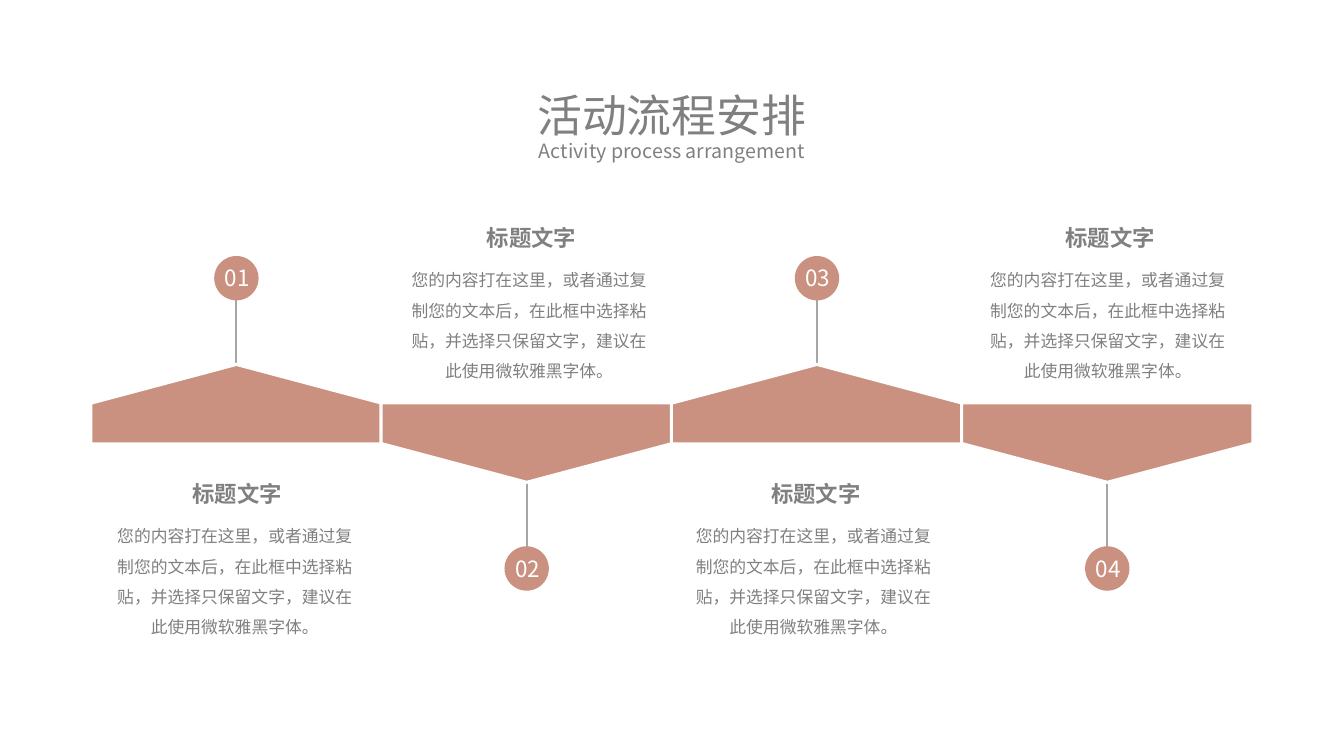
from dataclasses import dataclass

from lxml import etree
from pptx import Presentation
from pptx import util as u
from pptx.dml import color
from pptx.enum import shapes, text
from pptx.oxml import ns

# Grid: square cells, ten to the inch
CELL = u.Inches(0.1)
COLS, ROWS = 133.33, 75
MID = 42  # row of the band's axis

FONT = "Noto Sans CJK SC"
HUES = {"clay": "CA9180", "gray": "808080", "line": "A6A6A6", "white": "FFFFFF"}
HEAD = "标题文字"
BODY = ("您的内容打在这里，或者通过复制您的文本后，在此框中选择粘贴，"
        "并选择只保留文字，建议在此使用微软雅黑字体。")


@dataclass(frozen=True)
class Step:
    num: str
    col: float   # centre of plate, stem and bead
    note: float  # centre of the body text
    side: int    # -1 points up, 1 points down

    def row(self, off: float) -> float:
        return MID + self.side * off


@dataclass(frozen=True)
class Style:
    size: float
    hue: str = "gray"
    bold: bool = False
    lead: float | None = None  # line spacing
    gap: float = 0             # points before
    inset: bool = True
    wrap: bool = True


TITLE = Style(32, lead=1.2)
SUB = Style(14)
NUM = Style(16, "white", wrap=False)
TOP = Style(16, bold=True, gap=3.2, inset=False)
NOTE = Style(12, lead=1.5, inset=False)

STEPS = [
    Step(f"{i + 1:02}", 23.45 + 28.8 * i,
         23.3 + 57.4 * (i // 2) + 29.2 * (i % 2), 1 if i % 2 else -1)
    for i in range(4)
]


def cells(n: float) -> int:
    return round(n * CELL)


def rgb(hue: str) -> color.RGBColor:
    return color.RGBColor.from_string(HUES[hue])


def box(x: float, y: float, w: float, h: float) -> list[int]:
    """Turn a centre and a size in cells into left, top, width, height."""
    return [cells(n) for n in (x - w / 2, y - h / 2, w, h)]


def form(slide, kind, x: float, y: float, w: float, h: float):
    shape = slide.shapes.add_shape(kind, *box(x, y, w, h))
    shape.shadow.inherit = False
    shape.fill.solid()
    shape.fill.fore_color.rgb = rgb("clay")
    shape.line.fill.background()
    return shape


def write(slide, words: str, style: Style,
          x: float, y: float, w: float, h: float) -> None:
    frame = slide.shapes.add_textbox(*box(x, y, w, h)).text_frame
    frame.word_wrap = style.wrap
    frame.auto_size = text.MSO_AUTO_SIZE.SHAPE_TO_FIT_TEXT
    if not style.inset:
        frame.margin_left = frame.margin_right = 0
        frame.margin_top = frame.margin_bottom = 0
    para = frame.paragraphs[0]
    para.alignment = text.PP_ALIGN.CENTER
    if style.lead:
        para.line_spacing = style.lead
    if style.gap:
        para.space_before = u.Pt(style.gap)
    run = para.add_run()
    run.text = words
    run.font.size = u.Pt(style.size)
    run.font.bold = style.bold
    run.font.color.rgb = rgb(style.hue)
    run.font.name = FONT
    # East Asian face
    etree.SubElement(run.font._element, ns.qn("a:ea"), typeface=FONT)


def stem(slide, step: Step) -> None:
    x = cells(step.col)
    line = slide.shapes.add_connector(
        shapes.MSO_CONNECTOR.STRAIGHT,
        x, cells(step.row(12.7)), x, cells(step.row(4)))
    line.line.color.rgb = rgb("line")
    line.line.width = u.Pt(1.5)
    etree.SubElement(line._element.spPr, ns.qn("a:effectLst"))


def bead(slide, step: Step) -> None:
    form(slide, shapes.MSO_SHAPE.OVAL, step.col, step.row(14.4), 4.4, 4.4)


def plate(slide, step: Step) -> None:
    shape = form(slide, shapes.MSO_SHAPE.PENTAGON,
                 step.col, step.row(1.9), 7.9, 28.9)
    shape.rotation = 90 * step.side % 360
    shape.adjustments[0] = 0.487
    shape.line.color.rgb = rgb("white")
    shape.line.width = u.Pt(2.25)


def label(slide, step: Step) -> None:
    write(slide, step.num, NUM, step.col + 0.1, step.row(14.4) + 0.1, 4.9, 3.9)
    # Heading and body sit opposite the bead
    y = MID + (6.95 if step.side < 0 else -18.45)
    write(slide, HEAD, TOP, step.note + 0.25, y, 10.3, 2.7)
    write(slide, BODY, NOTE, step.note, y + 8.3, 24.6, 12.1)


def main() -> None:
    deck = Presentation()
    deck.slide_width, deck.slide_height = cells(COLS), cells(ROWS)
    slide = deck.slides.add_slide(deck.slide_layouts[6])

    # Process band, layer by layer
    for draw in (stem, bead, plate, label):
        for step in STEPS:
            draw(slide, step)

    # Title
    write(slide, "Activity process arrangement", SUB, COLS / 2, 15, 34.5, 3.4)
    write(slide, "活动流程安排", TITLE, COLS / 2, 10.55, 31.7, 6.9)

    deck.save("out.pptx")


if __name__ == "__main__":
    main()
